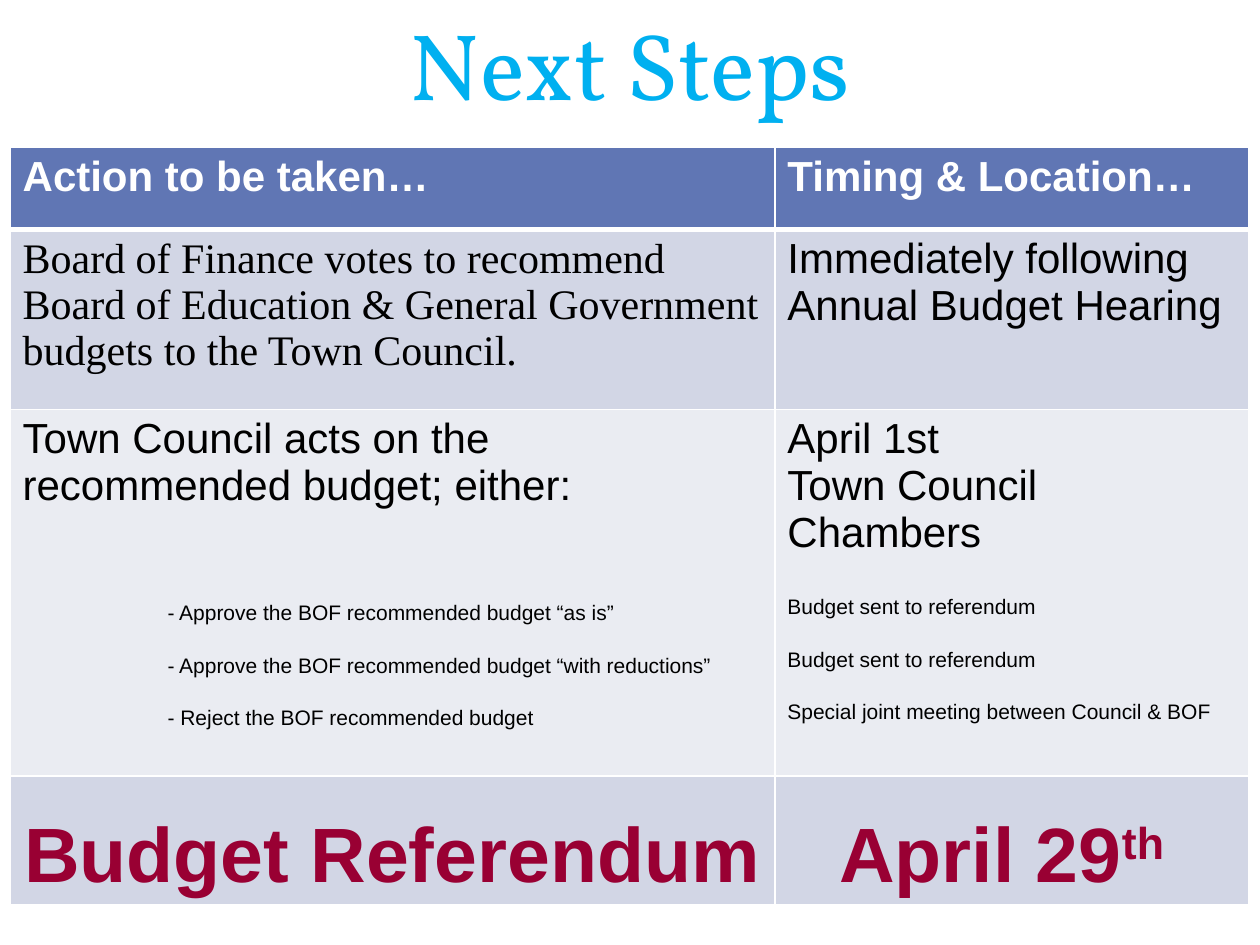
from dataclasses import dataclass

from lxml import etree
from pptx import Presentation
from pptx import util as u
from pptx.dml.color import RGBColor
from pptx.enum import text
from pptx.oxml import ns


@dataclass(frozen=True)
class Theme:
    title: str = "00B0F0"
    header: str = "6076B4"
    band_dark: str = "D2D6E5"
    band_light: str = "EAECF2"
    white: str = "FFFFFF"
    ink: str = "000000"
    accent: str = "990033"
    sans: str = "Arial"
    serif: str = "Times New Roman"
    display: str = "Vollkorn"
    title_size: int = 54
    big: int = 44
    body: int = 24
    small: int = 12


@dataclass
class Para:
    """One paragraph: text, font format, spacing and indent."""
    text: str
    size: int
    color: str
    font: str = Theme.sans
    bold: bool = False
    before: float = 0
    indent: float = 0
    align: object = text.PP_ALIGN.LEFT
    line: float = 0
    superscript: str = ""


class SlideBuilder:
    def __init__(self, prs, theme):
        self.theme = theme
        self.s = prs.slides.add_slide(prs.slide_layouts[6])

    def add_run(self, p, content, para):
        r = p.add_run()
        r.text = content
        style = {"name": para.font, "size": u.Pt(para.size), "bold": para.bold}
        for key, value in style.items():
            setattr(r.font, key, value)
        r.font.color.rgb = RGBColor.from_string(para.color)
        return r

    def fill_text(self, tf, paras):
        for i, para in enumerate(paras):
            p = tf.add_paragraph() if i else tf.paragraphs[0]
            p.alignment = para.align
            p.space_before = u.Pt(para.before)
            if para.line:
                p.line_spacing = u.Pt(para.line)
            if para.indent:
                p._p.get_or_add_pPr().set("marL", str(u.Inches(para.indent)))
            self.add_run(p, para.text, para)
            if para.superscript:
                r = self.add_run(p, para.superscript, para)
                r.font._element.set("baseline", "30000")

    def title(self, box, para):
        sp = self.s.shapes.add_textbox(*map(u.Inches, box))
        tf = sp.text_frame
        tf.word_wrap = True
        tf.vertical_anchor = text.MSO_ANCHOR.BOTTOM
        self.fill_text(tf, [para])

    def borders(self, cell, widths):
        tc_pr = cell._tc.get_or_add_tcPr()
        for i, (side, width) in enumerate(widths.items()):
            ln = etree.Element(ns.qn(f"a:ln{side}"), w=str(u.Pt(width)))
            fill = etree.SubElement(ln, ns.qn("a:solidFill"))
            etree.SubElement(fill, ns.qn("a:srgbClr"), val=self.theme.white)
            tc_pr.insert(i, ln)

    def table(self, left, top, widths, heights, rows, fills, margins):
        frame = self.s.shapes.add_table(
            len(rows), len(widths), u.Inches(left), u.Inches(top),
            u.Inches(sum(widths)), u.Inches(sum(heights)))
        table = frame.table
        for column, width in zip(table.columns, widths):
            column.width = u.Inches(width)
        for i, (row, height) in enumerate(zip(table.rows, heights)):
            row.height = u.Inches(height)
            for j, cell in enumerate(row.cells):
                cell.fill.solid()
                cell.fill.fore_color.rgb = RGBColor.from_string(fills[i])
                self.borders(cell, {"L": 1, "R": 1, "T": 3 if i == 1 else 1,
                                    "B": 3 if i == 0 else 1})
                for key, value in margins.get((i, j), {}).items():
                    setattr(cell, key, u.Inches(value))
                self.fill_text(cell.text_frame, rows[i][j])


def main():
    t = Theme()
    prs = Presentation()
    prs.slide_width, prs.slide_height = u.Inches(10), u.Inches(7.5)
    slide = SlideBuilder(prs, t)
    center = text.PP_ALIGN.CENTER

    # Title
    slide.title((0.5, 0, 9, 1), Para("Next Steps", t.title_size, t.title,
                                     t.display, align=center, line=58))

    # Paragraph kinds used in the table
    def head(content):
        return [Para(content, t.body, t.white, bold=True)]

    def body(content, font=t.sans):
        return Para(content, t.body, t.ink, font)

    def details(lines, first_gap, indent=0):
        return [Para(line, t.small, t.ink, before=16.6 if i else first_gap,
                     indent=indent) for i, line in enumerate(lines)]

    def vote(content, superscript=""):
        return [Para(content, t.big, t.accent, bold=True, align=center,
                     superscript=superscript)]

    # Table content
    choices = ["- Approve the BOF recommended budget “as is”",
               "- Approve the BOF recommended budget “with reductions”",
               "- Reject the BOF recommended budget"]
    outcomes = ["Budget sent to referendum", "Budget sent to referendum",
                "Special joint meeting between Council & BOF"]
    rows = [
        [head("Action to be taken…"), head("Timing & Location…")],
        [[body("Board of Finance votes to recommend Board of Education & "
               "General Government budgets to the Town Council.", t.serif)],
         [body("Immediately following Annual Budget Hearing")]],
        [[body("Town Council acts on the recommended budget; either:")]
         + details(choices, 52.6, indent=1.15),
         [body("April 1st"), body("Town Council Chambers")]
         + details(outcomes, 22.3)],
        [vote("Budget Referendum"), vote("April 29", "th")],
    ]

    # Table
    slide.table(0.08, 1.17, [6.07, 3.76], [0.65, 1.43, 2.91, 1.02], rows,
                [t.header, t.band_dark, t.band_light, t.band_dark],
                {(2, 0): {"margin_right": 0.05},
                 (3, 0): {"margin_top": 0.29, "margin_bottom": 0},
                 (3, 1): {"margin_top": 0.29, "margin_bottom": 0,
                          "margin_right": 0.26}})
    prs.save("out.pptx")


if __name__ == "__main__":
    main()
